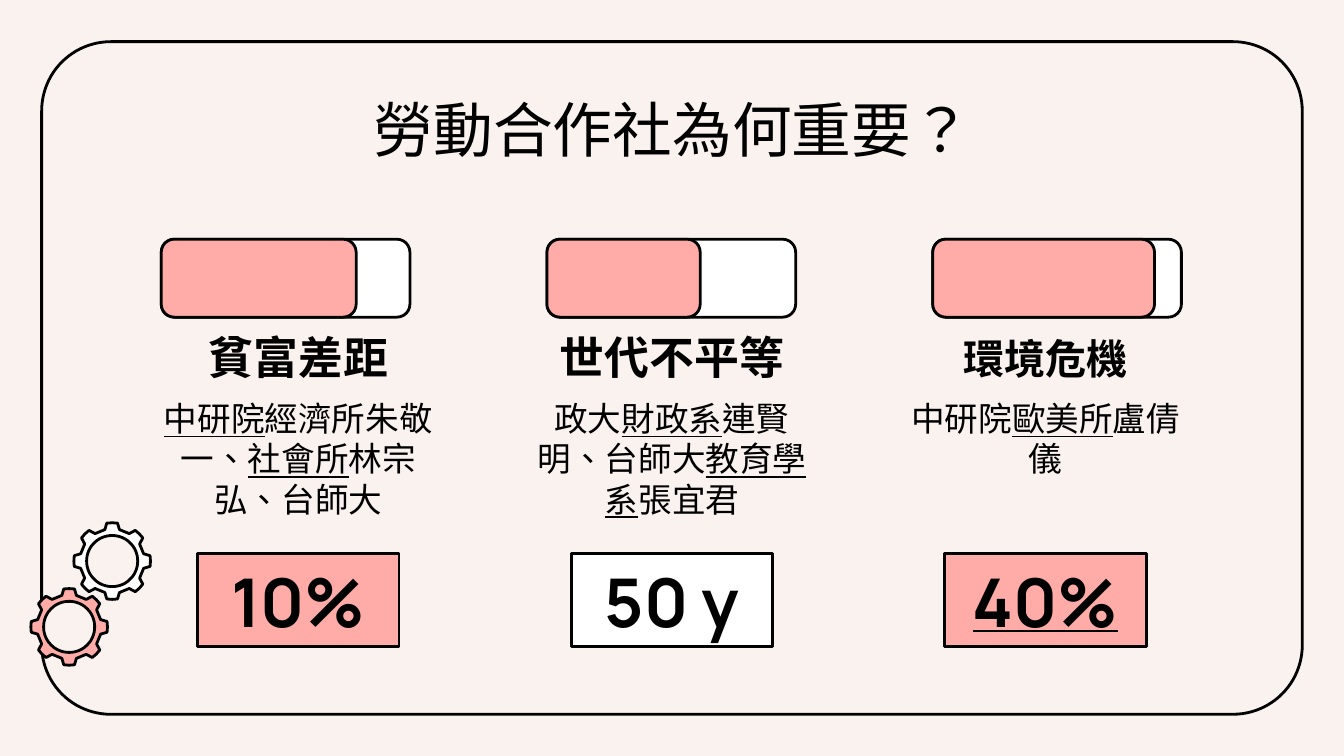
from math import cos, sin, radians

from pptx import Presentation
from pptx.dml.color import RGBColor
from pptx.enum.lang import MSO_LANGUAGE_ID as LANG
from pptx.enum.shapes import MSO_SHAPE as SHAPE
from pptx.enum.text import MSO_ANCHOR as ANCHOR, PP_ALIGN as ALIGN
from pptx.util import Inches, Pt

BLACK, WHITE, PINK, CREAM = "000000", "FFFFFF", "FFACA9", "FAF2EF"
W, H = 10, 45 / 8        # 16:9
COL = 2.78               # distance between column centres
BAR_STEP = 2.87          # distance between bars
BAR_W, BAR_H = 1.85, 0.58
TEXT_W = 2.38
BOX_W, BOX_H = 1.5, 0.69

prs = Presentation()
prs.slide_width, prs.slide_height = Inches(W), Inches(H)
s = prs.slides.add_slide(prs.slide_layouts[6])


def paint(sp, color=None):
    """Give a shape a black outline and a flat fill, or none."""
    sp.shadow.inherit = False
    if color:
        sp.fill.solid()
        sp.fill.fore_color.rgb = RGBColor.from_string(color)
    else:
        sp.fill.background()
    sp.line.color.rgb = RGBColor.from_string(BLACK)
    sp.line.width = Pt(1.5)


def write(sp, runs, size, bold=False, anchor=ANCHOR.TOP):
    """Fill a shape with one centred paragraph of (text, underlined) runs."""
    tf = sp.text_frame
    tf.word_wrap = True
    tf.vertical_anchor = anchor
    tf.margin_left = tf.margin_right = tf.margin_top = tf.margin_bottom = Inches(0.1)
    p = tf.paragraphs[0]
    p.alignment = ALIGN.CENTER
    p.font.name, p.font.size, p.font.bold = "Manrope", Pt(size), bold
    p.font.color.rgb = RGBColor.from_string(BLACK)
    p._p.get_or_add_pPr().set("hangingPunct", "0")
    for text, underlined in runs:
        r = p.add_run()
        r.text = text
        r.font.language_id = LANG.TRADITIONAL_CHINESE
        if underlined:
            r.font.underline = True


s.background.fill.solid()
s.background.fill.fore_color.rgb = RGBColor.from_string(CREAM)

# Frame
margin = 0.31
frame = s.shapes.add_shape(SHAPE.ROUNDED_RECTANGLE, Inches(margin), Inches(margin),
                           Inches(W - 2 * margin), Inches(H - 2 * margin))
frame.adjustments[0] = 0.103
paint(frame)

# Gears: eight teeth around a round hole, in thousandths of an inch
tooth = [(-13, 240), (-8, 285), (0, 285), (8, 285), (13, 240)]
rim = [(45 * i + a, radius) for i in range(8) for a, radius in tooth]
hole = [(a, 190) for a in range(0, 360, 6)]
for cx, cy, color in [(515, 4665, PINK), (835, 4175, WHITE)]:
    outer, inner = [[(cx + radius * sin(radians(a)), cy - radius * cos(radians(a)))
                     for a, radius in ring] for ring in (rim, hole)]
    fb = s.shapes.build_freeform(*outer[0], scale=Inches(1) / 1000)
    fb.add_line_segments(outer[1:], close=True)
    fb.move_to(*inner[0])
    fb.add_line_segments(inner[1:], close=True)
    paint(fb.convert_to_shape(), color)

# Title
title = s.shapes.add_textbox(Inches(0.79), Inches(0.59), Inches(8.43), Inches(0.63))
write(title, [("勞動合作社為何重要？", False)], 32)

# Columns: bar length, heading, heading size, sources, figure, box colour
columns = [
    (1.45, "貧富差距", 24,
     [("中研院", True), ("經濟所朱敬一、", False), ("社會所", True),
      ("林宗弘、台師大", False)],
     ("10%", False), PINK),
    (1.14, "世代不平等", 24,
     [("政大", False), ("財政系", True), ("連賢明、台師大", False),
      ("教育學系", True), ("張宜君", False)],
     ("50 y", False), WHITE),
    (1.65, "環境危機", 22,
     [("中研院", False), ("歐美所", True), ("盧倩儀", False)],
     ("40%", True), PINK),
]
for i, (length, heading, size, sources, figure, color) in enumerate(columns):
    center = W / 2 + (i - 1) * COL
    bar_left = 1.2 + i * BAR_STEP

    for width, fill in [(BAR_W, WHITE), (length, PINK)]:
        bar = s.shapes.add_shape(SHAPE.ROUNDED_RECTANGLE, Inches(bar_left),
                                 Inches(1.78), Inches(width), Inches(BAR_H))
        paint(bar, fill)

    text_left = Inches(center - TEXT_W / 2)
    body = s.shapes.add_textbox(text_left, Inches(2.86), Inches(TEXT_W), Inches(1.09))
    write(body, sources, 18)
    head = s.shapes.add_textbox(text_left, Inches(2.51), Inches(TEXT_W), Inches(0.44))
    write(head, [(heading, False)], size, bold=True, anchor=ANCHOR.BOTTOM)

    box = s.shapes.add_shape(SHAPE.RECTANGLE, Inches(center - BOX_W / 2), Inches(4.12),
                             Inches(BOX_W), Inches(BOX_H))
    paint(box, color)
    write(box, [figure], 36, bold=True, anchor=ANCHOR.MIDDLE)

prs.save("out.pptx")
